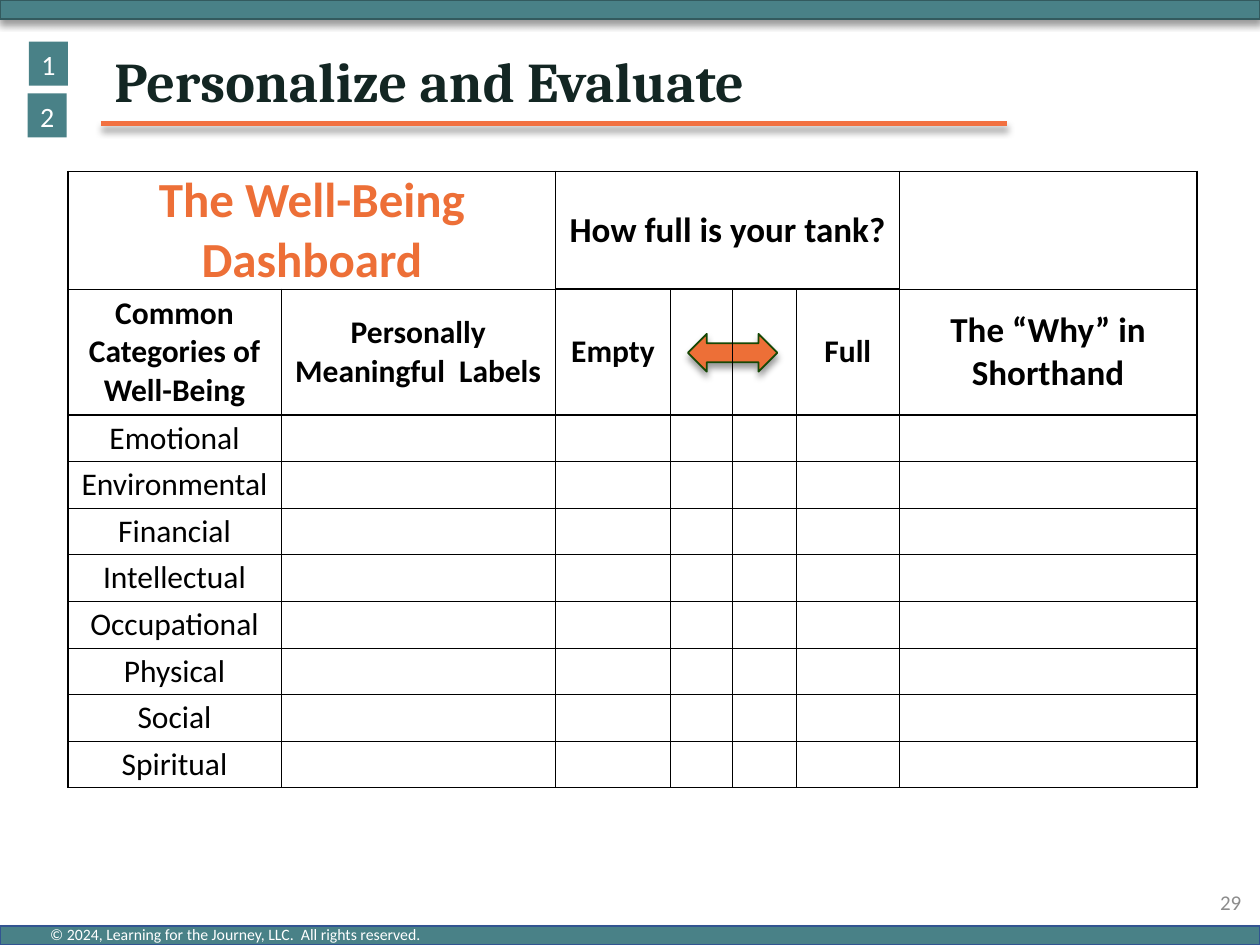
from lxml import etree
from pptx import Presentation
from pptx.dml.color import RGBColor
from pptx.enum.shapes import MSO_CONNECTOR, MSO_SHAPE
from pptx.enum.text import MSO_ANCHOR, PP_ALIGN
from pptx.oxml.ns import qn
from pptx.util import Inches, Pt

RECT, ARROW = MSO_SHAPE.RECTANGLE, MSO_SHAPE.LEFT_RIGHT_ARROW
STRAIGHT = MSO_CONNECTOR.STRAIGHT
LEFT, CENTER, RIGHT = PP_ALIGN.LEFT, PP_ALIGN.CENTER, PP_ALIGN.RIGHT
TOP, MIDDLE = MSO_ANCHOR.TOP, MSO_ANCHOR.MIDDLE

WIDTH, HEIGHT = 10, 7.5
GRID = 0.1  # inches per grid step: 100 columns by 75 rows
TEAL, ORANGE, BLACK, WHITE = "498187", "ED6F37", "000000", "FFFFFF"
PLAIN_TABLE = "{2D5ABB26-0587-4C30-8999-92F81FD0307C}"
THICK, THIN = 1, 0.5

CATEGORIES = ["Emotional", "Environmental", "Financial", "Intellectual",
              "Occupational", "Physical", "Social", "Spiritual"]
COLUMN_WIDTHS = [16.9, 21.8, 9.1, 4.9, 5.1, 8.2, 23.6]
ROW_HEIGHTS = [6.9, 10] + [3.7] * len(CATEGORIES)


def color(value):
    return RGBColor.from_string(value)


def steps(count):
    return Inches(count * GRID)


class SlideBuilder:
    """Holds the style and the current page; lengths are grid steps."""

    def __init__(self, deck, font="Calibri"):
        self.page = deck.slides.add_slide(deck.slide_layouts[6])
        self.font = font

    def add_words(self, frame, text, size, ink, align=LEFT, bold=False,
                  font=None):
        para = frame.paragraphs[0]
        para.alignment = align
        span = para.add_run()
        span.text = text
        span.font.name = font or self.font
        span.font.size = Pt(size)
        span.font.bold = bold
        span.font.color.rgb = color(ink)
        return para

    def shadow(self, item):
        effects = etree.SubElement(item._element.spPr, qn("a:effectLst"))
        outer = etree.SubElement(
            effects, qn("a:outerShdw"), blurRad=str(Pt(4)), dist=str(Pt(3)),
            dir="5400000", rotWithShape="0")
        shade = etree.SubElement(outer, qn("a:srgbClr"), val=BLACK)
        etree.SubElement(shade, qn("a:alpha"), val="40000")

    def shape(self, kind, place, fill, outline=None):
        item = self.page.shapes.add_shape(kind, *map(steps, place))
        item.fill.solid()
        item.fill.fore_color.rgb = color(fill)
        if outline:
            item.line.color.rgb = color(outline)
            item.line.width = Pt(1)
            self.shadow(item)
        else:
            item.line.fill.background()
            item.shadow.inherit = False
        return item

    def badge(self, place, text):
        frame = self.shape(RECT, place, TEAL).text_frame
        frame.word_wrap = False
        frame.vertical_anchor = TOP
        self.add_words(frame, text, 16, WHITE, CENTER)

    def text(self, place, text, size, ink, anchor=MIDDLE, wrap=True, **style):
        frame = self.page.shapes.add_textbox(*map(steps, place)).text_frame
        frame.word_wrap = wrap
        frame.vertical_anchor = anchor
        return self.add_words(frame, text, size, ink, **style)

    def rule(self, start, end, ink, weight):
        line = self.page.shapes.add_connector(
            STRAIGHT, *map(steps, start), *map(steps, end))
        line.line.color.rgb = color(ink)
        line.line.width = Pt(weight)
        self.shadow(line)

    def border(self, cell, side, weight):
        line = etree.SubElement(cell._tc.get_or_add_tcPr(), qn(f"a:ln{side}"),
                                w=str(Pt(weight)))
        fill = etree.SubElement(line, qn("a:solidFill"))
        etree.SubElement(fill, qn("a:srgbClr"), val=BLACK)

    def table(self, left, top, widths, heights, merges, texts, weigh):
        frame = self.page.shapes.add_table(
            len(heights), len(widths), steps(left), steps(top),
            steps(sum(widths)), steps(sum(heights)))
        grid = frame.table
        grid.first_row = grid.horz_banding = False
        grid._tbl.tblPr.find(qn("a:tableStyleId")).text = PLAIN_TABLE
        for column, width in zip(grid.columns, widths):
            column.width = steps(width)
        for row, height in zip(grid.rows, heights):
            row.height = steps(height)
        for row, first, last in merges:
            grid.cell(row, first).merge(grid.cell(row, last))
        for row in range(len(heights)):
            for col in range(len(widths)):
                cell = grid.cell(row, col)
                cell.margin_left = cell.margin_right = 0
                cell.margin_top = cell.margin_bottom = 0
                cell.vertical_anchor = MIDDLE
                if not cell.is_spanned:
                    span = cell.span_width if cell.is_merge_origin else 1
                    for side, weight in weigh(row, col, span).items():
                        self.border(cell, side, weight)
                cell.fill.background()
                if (row, col) in texts:
                    text, size, ink, bold = texts[row, col]
                    self.add_words(cell.text_frame, text, size, ink, CENTER,
                                   bold)


def dashboard_borders(row, col, span):
    """Thick lines frame the sections, thin lines divide them."""
    def across(edge):
        heading = edge == 1 and 2 <= col <= 5
        return THICK if edge in (0, 2, len(ROW_HEIGHTS)) or heading else THIN

    def down(edge):
        return THICK if edge in (0, 2, 6, len(COLUMN_WIDTHS)) else THIN

    return {"L": down(col), "R": down(col + span),
            "T": across(row), "B": across(row + 1)}


def main():
    deck = Presentation()
    deck.slide_width, deck.slide_height = Inches(WIDTH), Inches(HEIGHT)
    page = SlideBuilder(deck)

    # Top and bottom bands
    page.shape(RECT, (0, 0, 100, 1.5), TEAL, "335A5E")
    page.shape(RECT, (0, 73.5, 100, 1.5), TEAL, "325491")
    page.text((3, 72.9, 31.8, 2.5),
              "© 2024, Learning for the Journey, LLC.  All rights reserved.",
              9, WHITE, anchor=TOP, wrap=False)

    # Title and page number
    page.rule((8, 9.8), (79.9, 9.8), "F27141", 3)
    title = page.text((8.1, 3.8, 68.6, 5.8), "Personalize and Evaluate",
                      32, "132623", bold=True, font="Cambria")
    title.line_spacing = 0.9
    page.text((77, 69.6, 22.5, 4), "29", 12, "8C8C8C", align=RIGHT)

    # Arrow between empty and full, under the table lines
    page.shape(ARROW, (54.6, 26.5, 7.1, 3), ORANGE, "164805")

    # Step badges
    page.badge((2.3, 3.3, 3.1, 3.5), "1")
    page.badge((2.2, 7.4, 3.1, 3.5), "2")

    # Well-being table
    texts = {
        (0, 0): ("The Well-Being Dashboard", 28, ORANGE, True),
        (0, 2): ("How full is your tank?", 20, BLACK, True),
        (1, 0): ("Common Categories of Well-Being", 18, BLACK, True),
        (1, 1): ("Personally Meaningful  Labels", 18, BLACK, True),
        (1, 2): ("Empty", 18, BLACK, True),
        (1, 5): ("Full", 18, BLACK, True),
        (1, 6): ("The “Why” in Shorthand", 20, BLACK, True),
    }
    for row, category in enumerate(CATEGORIES, start=2):
        texts[row, 0] = (category, 18, BLACK, False)
    page.table(5.4, 13.6, COLUMN_WIDTHS, ROW_HEIGHTS,
               [(0, 0, 1), (0, 2, 5)], texts, dashboard_borders)

    deck.save("out.pptx")


if __name__ == "__main__":
    main()
